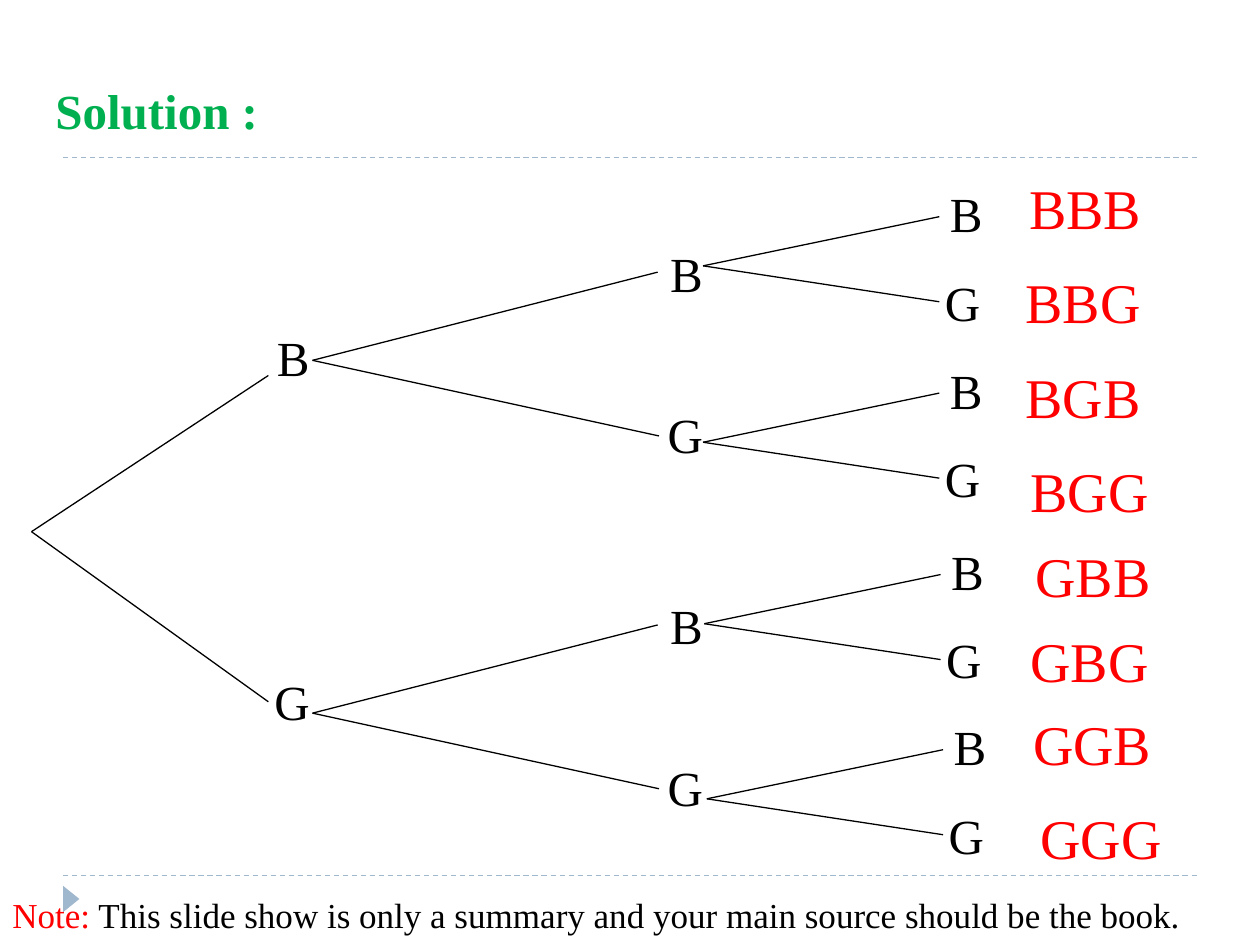
import pptx
import pptx.util
from lxml import etree
from pptx.dml.color import RGBColor
from pptx.enum.dml import MSO_LINE
from pptx.enum.shapes import MSO_CONNECTOR, MSO_SHAPE
from pptx.enum.text import MSO_ANCHOR, MSO_AUTO_SIZE, PP_ALIGN
from pptx.oxml.ns import qn

COLORS = {"ink": "000000", "title": "00B050", "accent": "FF0000", "rule": "9FB8CD"}
FONT = "Times New Roman"

prs = pptx.Presentation()
prs.slide_width = pptx.util.Inches(10)
prs.slide_height = pptx.util.Inches(7.5)
COL = prs.slide_width / 100
ROW = prs.slide_height / 75

# Each level: roots of its forks, then line end and label offsets for B and G.
LEVELS = [
    ([(2.5, 42.2)],
     {"B": ((18.8, -12.4), (18.5, -16.7)), "G": ((18.8, 13.5), (18.3, 10.6))}),
    ([(24.8, 28.6), (24.8, 56.6)],
     {"B": ((27.4, -7), (27.4, -9.8)), "G": ((27.5, 6), (27.2, 3))}),
    ([(55.8, 21.1), (55.8, 35.1), (55.9, 49.5), (56.1, 63.4)],
     {"B": ((18.75, -3.9), (18.6, -7)), "G": ((18.75, 2.85), (18.2, 0))}),
]
# Outcome: left, top, width, height, line spacing in points
OUTCOMES = {
    "BBB": (80.7, 12.5, 11, 7.2, 44),
    "BBG": (80.4, 20, 11.3, 7.2, 44),
    "BGB": (80.4, 27.5, 11.3, 7.2, 44),
    "BGG": (80.8, 35, 11.5, 7.2, 44),
    "GBB": (81.2, 41.7, 11.3, 7.2, 44),
    "GBG": (80.8, 49.2, 11.5, 6.4, None),
    "GGB": (81, 55.8, 11.5, 6.4, None),
    "GGG": (81.6, 63.3, 11.7, 6.4, None),
}


def grid(x, y):
    return round(x * COL), round(y * ROW)


def rgb(name):
    return RGBColor.from_string(COLORS[name])


def set_font(font, size, color, bold=False):
    font.name, font.size, font.bold = FONT, pptx.util.Pt(size), bold
    font.color.rgb = rgb(color)


def add_line(s, start, end, color, dash=None):
    line = s.shapes.add_connector(MSO_CONNECTOR.STRAIGHT, *grid(*start), *grid(*end))
    line.line.color.rgb = rgb(color)
    line.line.width = pptx.util.Pt(0.75)
    if dash:
        line.line.dash_style = dash
    etree.SubElement(line._element.spPr, qn("a:effectLst"))


def add_text(s, box, runs, size, wrap=False, spacing=None):
    """Add one paragraph of (text, colour) runs in a box."""
    x, y, w, h = box
    tf = s.shapes.add_textbox(*grid(x, y), *grid(w, h)).text_frame
    tf.word_wrap = wrap
    tf.auto_size = MSO_AUTO_SIZE.SHAPE_TO_FIT_TEXT
    p = tf.paragraphs[0]
    if spacing:
        p.line_spacing = pptx.util.Pt(spacing)
    for text, color in runs:
        r = p.add_run()
        r.text = text
        set_font(r.font, size, color)


def add_frame(s, box):
    """Draw the dashed rules at the top and bottom of the box, and the marker."""
    x, y, w, h = box
    for rule_y in (y, y + h):
        add_line(s, (x, rule_y), (x + w, rule_y), "rule", MSO_LINE.DASH)
    sp = s.shapes.add_shape(MSO_SHAPE.ISOSCELES_TRIANGLE,
                            *grid(x - 0.4, y + h + 1.2), *grid(2.1, 1.3))
    sp.rotation = 90
    sp.shadow.inherit = False
    sp.fill.solid()
    sp.fill.fore_color.rgb = rgb("rule")
    sp.line.fill.background()


def add_title(s, box, text):
    x, y, w, h = box
    title = s.shapes.title
    title.left, title.top = grid(x, y)
    title.width, title.height = grid(w, h)
    tf = title.text_frame
    tf.text = text
    tf.word_wrap = False
    tf.auto_size = MSO_AUTO_SIZE.SHAPE_TO_FIT_TEXT
    tf.vertical_anchor = MSO_ANCHOR.TOP
    p = tf.paragraphs[0]
    p.alignment = PP_ALIGN.LEFT
    set_font(p.font, 28, "title", bold=True)


def add_fork(s, root, branches):
    x, y = root
    for letter, ((end_x, end_y), (label_x, label_y)) in branches.items():
        add_line(s, root, (x + end_x, y + end_y), "ink")
        width = 5 if letter == "B" else 5.2
        add_text(s, (x + label_x, y + label_y, width, 5.7), [(letter, "ink")], 28)


def add_tree(s):
    for roots, branches in LEVELS:
        for root in roots:
            add_fork(s, root, branches)
    for outcome, (*box, spacing) in OUTCOMES.items():
        add_text(s, box, [(outcome, "accent")], 32, spacing=spacing)


def main():
    s = prs.slides.add_slide(prs.slide_layouts[5])
    add_frame(s, (5, 12.5, 90, 57))
    add_title(s, (3.4, 5.9, 18.3, 5.7), "Solution :")
    add_tree(s)
    note = " This slide show is only a summary and your main source should be the book."
    add_text(s, (0, 70.4, 97.5, 4.4), [("Note:", "accent"), (note, "ink")], 20, wrap=True)
    prs.save("out.pptx")


if __name__ == "__main__":
    main()
